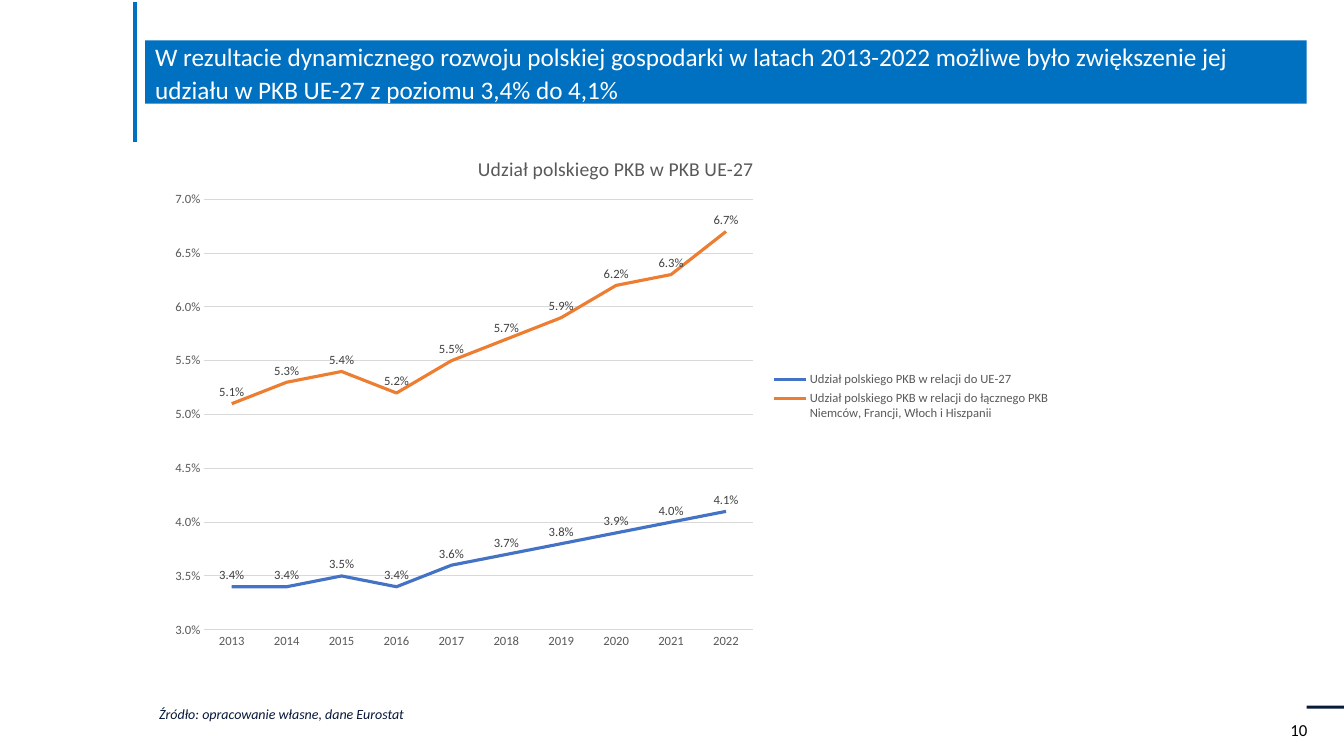
"""Build the slide on Poland's share of EU-27 GDP."""
from dataclasses import dataclass
from typing import Any, Optional

from lxml import etree
from pptx import Presentation
from pptx.chart.chart import Chart
from pptx.chart.data import CategoryChartData
from pptx.dml.color import RGBColor
from pptx.enum.chart import XL_CHART_TYPE, XL_LABEL_POSITION, XL_LEGEND_POSITION, XL_TICK_MARK
from pptx.enum.shapes import MSO_CONNECTOR, MSO_SHAPE
from pptx.enum.text import MSO_ANCHOR, PP_ALIGN
from pptx.oxml.ns import qn
from pptx.slide import Slide
from pptx.text.text import Font
from pptx.util import Inches, Pt

LINE_CHART = XL_CHART_TYPE.LINE
LABEL_ABOVE = XL_LABEL_POSITION.ABOVE
LEGEND_RIGHT = XL_LEGEND_POSITION.RIGHT
NO_TICKS = XL_TICK_MARK.NONE
STRAIGHT = MSO_CONNECTOR.STRAIGHT
RECTANGLE = MSO_SHAPE.RECTANGLE
MIDDLE, TOP = MSO_ANCHOR.MIDDLE, MSO_ANCHOR.TOP
LEFT = PP_ALIGN.LEFT


@dataclass(frozen=True)
class Theme:
    """Colours, typeface and type sizes of the slide."""

    typeface: str = "Calibri"
    blue: str = "0070C0"
    navy: str = "091939"
    white: str = "FFFFFF"
    black: str = "000000"
    axis_grey: str = "595959"
    label_grey: str = "404040"
    grid_grey: str = "D9D9D9"
    share_eu: str = "4472C4"
    share_big_four: str = "ED7D31"
    headline: float = 18
    chart_title: float = 14
    page_number: float = 12
    source: float = 10
    chart_text: float = 9


@dataclass(frozen=True)
class Block:
    """A rectangle on the slide, filled or bare, with optional text."""

    box: tuple[float, float, float, float]
    text: str = ""
    fill: Optional[str] = None
    size: float = 12
    color: str = "000000"
    italic: bool = False
    anchor: Any = TOP
    line_spacing: float = 1.0
    space_after: float = 0


@dataclass(frozen=True)
class GdpShare:
    """One line of the chart, in percent."""

    name: str
    percents: tuple[float, ...]
    color: str


@dataclass(frozen=True)
class Placement:
    """Place of a chart part, as fractions of the chart."""

    tag: str
    index: int
    values: dict[str, Any]


THEME = Theme()
PERCENT = "0.0%"
YEARS = [str(year) for year in range(2013, 2023)]
CHART_BOX = (1.58, 1.3, 8.93, 5.21)
CHART_TITLE = "Udział polskiego PKB w PKB UE-27"

BLOCKS = (
    Block((12.7, 7.09, 0.45, 0.3), "10", size=THEME.page_number, color=THEME.black),
    Block((12.96, 7, 0.37, 0.03), fill=THEME.navy),
    Block(
        (1.44, 0.4, 11.52, 0.63),
        "W rezultacie dynamicznego rozwoju polskiej gospodarki w latach 2013-2022 możliwe było "
        "zwiększenie jej udziału w PKB UE-27 z poziomu 3,4% do 4,1%",
        fill=THEME.blue, size=THEME.headline, color=THEME.white,
        anchor=MIDDLE, line_spacing=1.07, space_after=8,
    ),
    Block(
        (1.48, 6.87, 5.01, 0.33), "Źródło: opracowanie własne, dane Eurostat",
        size=THEME.source, color=THEME.navy, italic=True, line_spacing=1.5,
    ),
)
SHARES = (
    GdpShare(
        "Udział polskiego PKB w relacji do UE-27",
        (3.4, 3.4, 3.5, 3.4, 3.6, 3.7, 3.8, 3.9, 4.0, 4.1), THEME.share_eu,
    ),
    GdpShare(
        "Udział polskiego PKB w relacji do łącznego PKB Niemców, Francji, Włoch i Hiszpanii",
        (5.1, 5.3, 5.4, 5.2, 5.5, 5.7, 5.9, 6.2, 6.3, 6.7), THEME.share_big_four,
    ),
)
PLACEMENTS = (
    Placement("c:title", 1, {"xMode": "edge", "yMode": "edge", "x": 0.35, "y": 0.04}),
    Placement("c:plotArea", 0, {"layoutTarget": "inner", "xMode": "edge", "yMode": "edge",
                                "x": 0.05, "y": 0.13, "w": 0.61, "h": 0.82}),
    Placement("c:legend", 1, {"xMode": "edge", "yMode": "edge",
                              "x": 0.68, "y": 0.45, "w": 0.31, "h": 0.11}),
)


def apply_format(target: Any, values: dict[str, Any]) -> None:
    """Set each named attribute on the target."""
    for name, value in values.items():
        setattr(target, name, value)


def style_font(font: Font, size: float, color: str, italic: bool = False) -> None:
    """Give a font the slide's typeface with its size and colour."""
    apply_format(font, {"name": THEME.typeface, "size": Pt(size), "bold": False, "italic": italic})
    font.color.rgb = RGBColor.from_string(color)


def style_line(line: Any, color: str, width: float) -> None:
    """Colour a line and set its width in points."""
    line.color.rgb = RGBColor.from_string(color)
    line.width = Pt(width)


def draw_block(slide: Slide, block: Block) -> None:
    """Draw a filled rectangle or a text box."""
    box = [Inches(length) for length in block.box]
    if block.fill:
        area = slide.shapes.add_shape(RECTANGLE, *box)
        area.shadow.inherit = False
        area.fill.solid()
        area.fill.fore_color.rgb = RGBColor.from_string(block.fill)
        area.line.fill.background()
    else:
        area = slide.shapes.add_textbox(*box)
    if block.text:
        apply_format(area.text_frame, {"word_wrap": True, "vertical_anchor": block.anchor})
        paragraph = area.text_frame.paragraphs[0]
        apply_format(paragraph, {"alignment": LEFT, "line_spacing": block.line_spacing,
                                 "space_after": Pt(block.space_after)})
        run = paragraph.add_run()
        run.text = block.text
        style_font(run.font, block.size, block.color, block.italic)


def draw_accent(slide: Slide) -> None:
    """Draw the vertical line left of the headline."""
    accent = slide.shapes.add_connector(
        STRAIGHT, Inches(1.34), Inches(0.02), Inches(1.34), Inches(1.41))
    style_line(accent.line, THEME.blue, 3)
    etree.SubElement(accent.element.spPr, qn("a:effectLst"))


def place_part(chart: Chart, placement: Placement) -> None:
    """Fix the place of one part of the chart."""
    part = chart.element.find(f".//{qn(placement.tag)}")
    layout = part.find(qn("c:layout"))
    if layout is None:
        layout = etree.Element(qn("c:layout"))
        part.insert(placement.index, layout)
    manual = etree.SubElement(layout, qn("c:manualLayout"))
    for name, value in placement.values.items():
        etree.SubElement(manual, qn(f"c:{name}"), val=str(value))


def draw_chart(slide: Slide) -> None:
    """Draw the line chart of GDP shares."""
    chart_data = CategoryChartData(number_format=PERCENT)
    chart_data.categories = YEARS
    for share in SHARES:
        chart_data.add_series(share.name, [round(value / 100, 3) for value in share.percents])
    box = [Inches(length) for length in CHART_BOX]
    chart = slide.shapes.add_chart(LINE_CHART, *box, chart_data).chart
    style_font(chart.font, THEME.source, THEME.black)
    apply_format(chart, {"has_title": True, "has_legend": True})
    chart.plots[0].vary_by_categories = False

    heading = chart.chart_title.text_frame.paragraphs[0].add_run()
    heading.text = CHART_TITLE
    style_font(heading.font, THEME.chart_title, THEME.axis_grey)
    apply_format(chart.legend, {"position": LEGEND_RIGHT, "include_in_layout": False})
    style_font(chart.legend.font, THEME.chart_text, THEME.axis_grey)

    years, shares = chart.category_axis, chart.value_axis
    for axis in (years, shares):
        apply_format(axis, {"major_tick_mark": NO_TICKS, "minor_tick_mark": NO_TICKS})
        style_font(axis.tick_labels.font, THEME.chart_text, THEME.axis_grey)
    apply_format(shares, {"minimum_scale": 0.03, "maximum_scale": 0.07,
                          "major_unit": 0.005, "has_major_gridlines": True})
    apply_format(shares.tick_labels, {"number_format": PERCENT, "number_format_is_linked": False})
    shares.format.line.fill.background()
    for line in (years.format.line, shares.major_gridlines.format.line):
        style_line(line, THEME.grid_grey, 0.75)

    for series, share in zip(chart.plots[0].series, SHARES):
        series.smooth = False
        style_line(series.format.line, share.color, 2.25)
        apply_format(series.data_labels, {"show_value": True, "position": LABEL_ABOVE,
                                          "number_format": PERCENT,
                                          "number_format_is_linked": False})
        style_font(series.data_labels.font, THEME.chart_text, THEME.label_grey)
    for placement in PLACEMENTS:
        place_part(chart, placement)


def main() -> None:
    """Build and save the slide."""
    deck = Presentation()
    apply_format(deck, {"slide_width": Inches(13.33), "slide_height": Inches(7.5)})
    slide = deck.slides.add_slide(deck.slide_layouts[6])
    for block in BLOCKS:
        draw_block(slide, block)
    draw_accent(slide)
    draw_chart(slide)
    deck.save("out.pptx")


if __name__ == "__main__":
    main()
